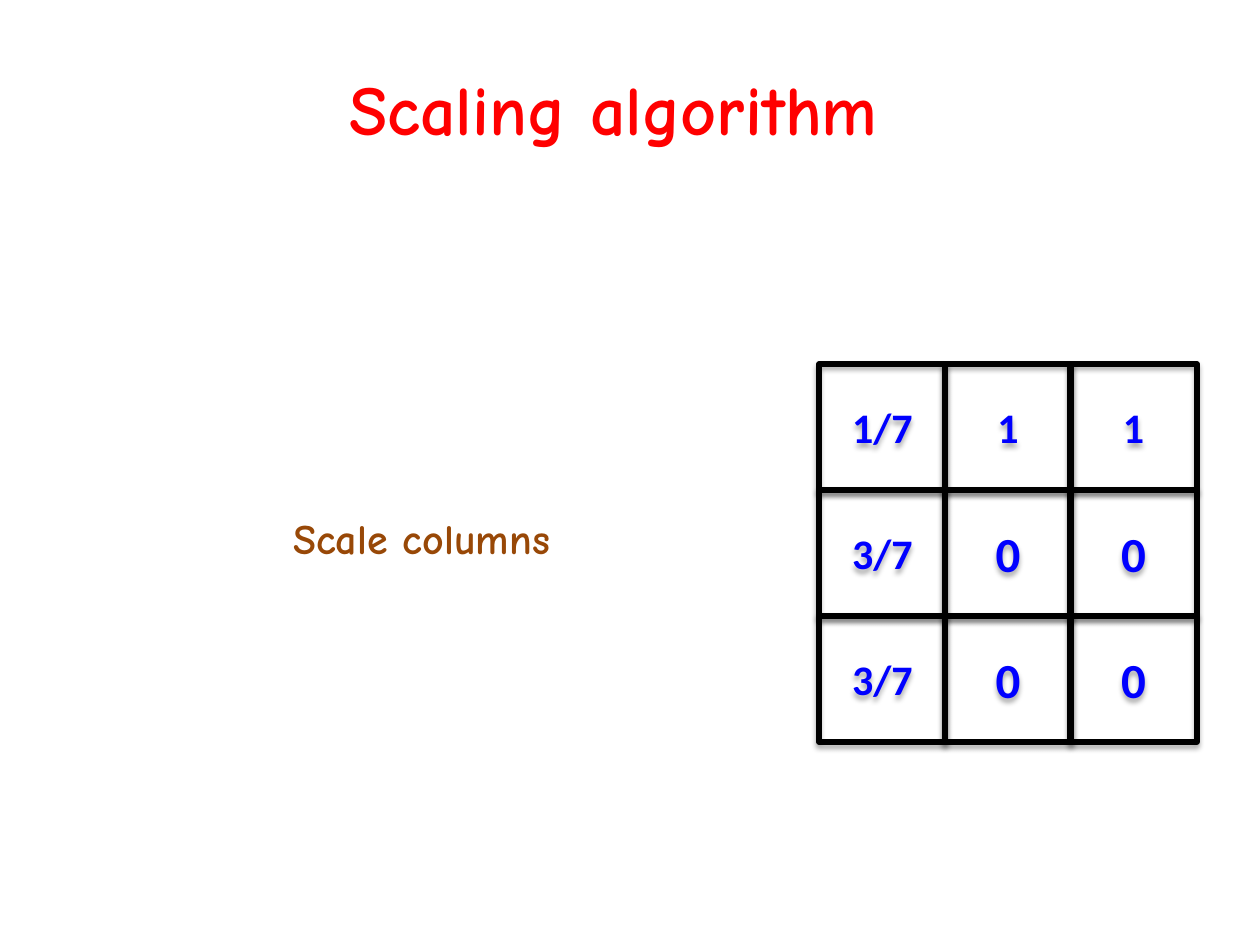
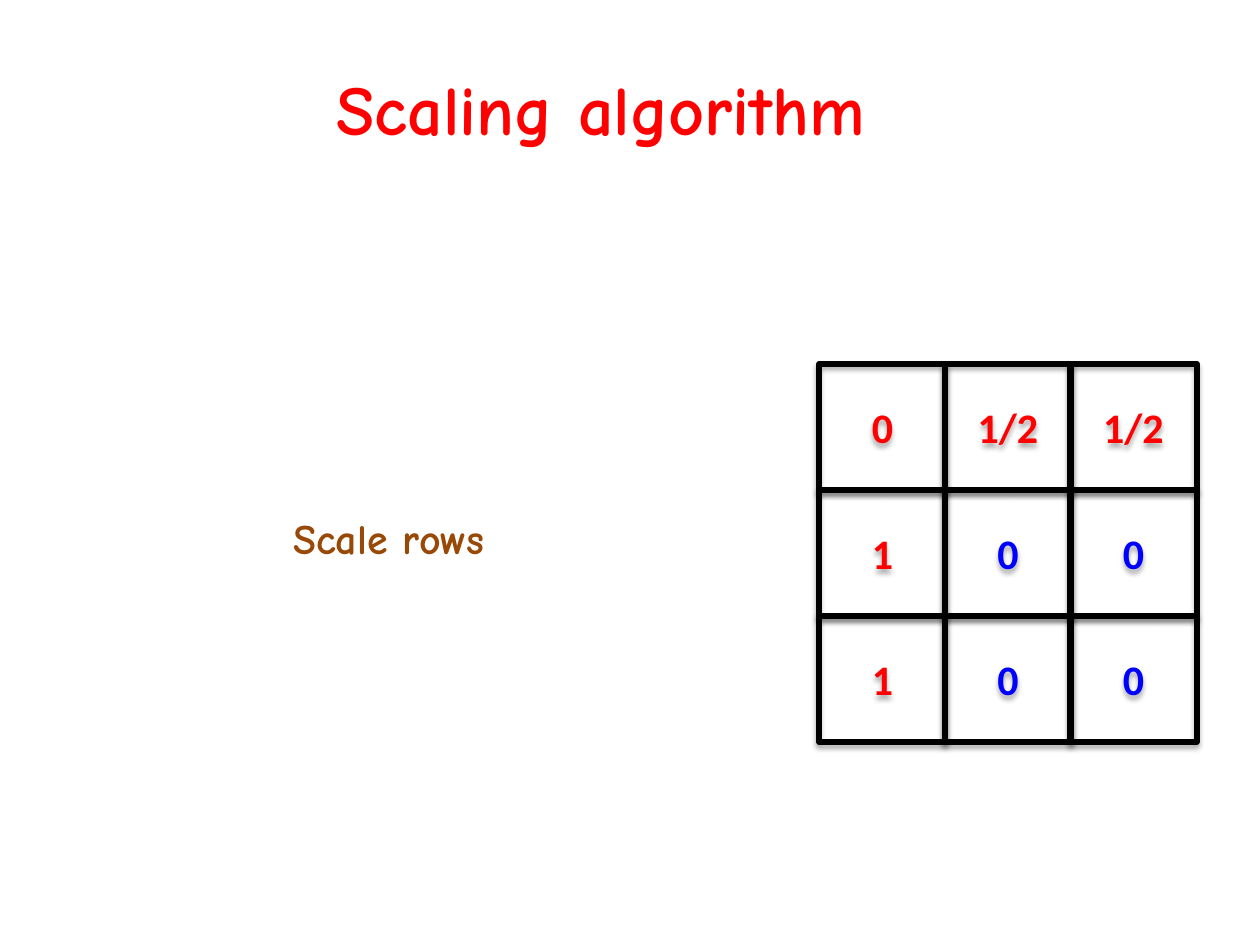
from dataclasses import dataclass

from lxml import etree
from pptx import Presentation
from pptx.dml.color import RGBColor
from pptx.enum import shapes, text
from pptx.oxml import ns
from pptx.util import Pt


@dataclass(frozen=True)
class Theme:
    red: RGBColor = RGBColor(0xFF, 0x00, 0x00)
    blue: RGBColor = RGBColor(0x00, 0x00, 0xFF)
    brown: RGBColor = RGBColor(0x98, 0x48, 0x07)
    black: RGBColor = RGBColor(0x00, 0x00, 0x00)
    heading_font: str = "Comic Neue"
    cell_font: str = "Calibri"
    title_size: int = 40
    label_size: int = 24
    cell_size: int = 24
    large_cell_size: int = 28


THEME = Theme()
GRID_LEFT, GRID_TOP = 468, 208
COLUMN_STEP, ROW_STEP = 71.75, 72
CELL_WIDTH, CELL_HEIGHT = 72.5, 72


def add_run(paragraph, wording, font_name, size, color):
    run = paragraph.add_run()
    run.text = wording
    run.font.name = font_name
    run.font.size = Pt(size)
    run.font.bold = True
    run.font.color.rgb = color


def add_soft_shadow(shape):
    shape.shadow.inherit = False
    effects = shape._element.spPr.find(ns.qn("a:effectLst"))
    shadow = etree.SubElement(
        effects, ns.qn("a:outerShdw"), blurRad=str(Pt(3.1)),
        dist=str(Pt(1.8)), dir="5400000", rotWithShape="0")
    color = etree.SubElement(shadow, ns.qn("a:srgbClr"), val=str(THEME.black))
    etree.SubElement(color, ns.qn("a:alpha"), val="35000")


def add_title(slide, wording):
    title = slide.shapes.title
    title.left, title.top, title.width, title.height = (
        Pt(44.6), Pt(3.6), Pt(612), Pt(116))
    frame = title.text_frame
    frame.vertical_anchor = text.MSO_ANCHOR.MIDDLE
    paragraph = frame.paragraphs[0]
    paragraph.alignment = text.PP_ALIGN.CENTER
    add_run(paragraph, wording, THEME.heading_font, THEME.title_size, THEME.red)


def add_step_label(slide, wording, width):
    label = slide.shapes.add_textbox(Pt(160.5), Pt(289.5), Pt(width), Pt(36))
    frame = label.text_frame
    frame.word_wrap = False
    frame.auto_size = text.MSO_AUTO_SIZE.SHAPE_TO_FIT_TEXT
    add_run(frame.paragraphs[0], wording, THEME.heading_font,
            THEME.label_size, THEME.brown)


def add_cell(group, row, column, value, size, color):
    cell = group.shapes.add_shape(
        shapes.MSO_SHAPE.RECTANGLE,
        Pt(GRID_LEFT + column * COLUMN_STEP), Pt(GRID_TOP + row * ROW_STEP),
        Pt(CELL_WIDTH), Pt(CELL_HEIGHT))
    cell.fill.background()
    cell.line.color.rgb = THEME.black
    cell.line.width = Pt(3)
    add_soft_shadow(cell)
    frame = cell.text_frame
    frame.vertical_anchor = text.MSO_ANCHOR.MIDDLE
    paragraph = frame.paragraphs[0]
    paragraph.alignment = text.PP_ALIGN.CENTER
    add_run(paragraph, value, THEME.cell_font, size, color)


def add_matrix(slide, rows, zero_size, changed):
    group = slide.shapes.add_group_shape()
    for row in reversed(range(len(rows))):
        for column, value in enumerate(rows[row]):
            size = zero_size if value == "0" else THEME.cell_size
            color = THEME.red if (row, column) in changed else THEME.blue
            add_cell(group, row, column, value, size, color)


def add_scaling_slide(presentation, title, step, step_width, rows,
                      zero_size=THEME.cell_size, changed=()):
    slide = presentation.slides.add_slide(presentation.slide_layouts[0])
    subtitle = slide.placeholders[1]._element
    subtitle.getparent().remove(subtitle)
    add_matrix(slide, rows, zero_size, changed)
    add_title(slide, title)
    add_step_label(slide, step, step_width)


def main():
    presentation = Presentation()
    presentation.slide_width, presentation.slide_height = Pt(720), Pt(540)
    add_scaling_slide(
        presentation, "Scaling algorithm", "Scale columns", 175.7,
        [["1/7", "1", "1"], ["3/7", "0", "0"], ["3/7", "0", "0"]],
        zero_size=THEME.large_cell_size)
    add_scaling_slide(
        presentation, "Scaling algorithm ", "Scale rows", 140.4,
        [["0", "1/2", "1/2"], ["1", "0", "0"], ["1", "0", "0"]],
        changed={(0, 0), (0, 1), (0, 2), (1, 0), (2, 0)})
    presentation.save("out.pptx")


if __name__ == "__main__":
    main()
